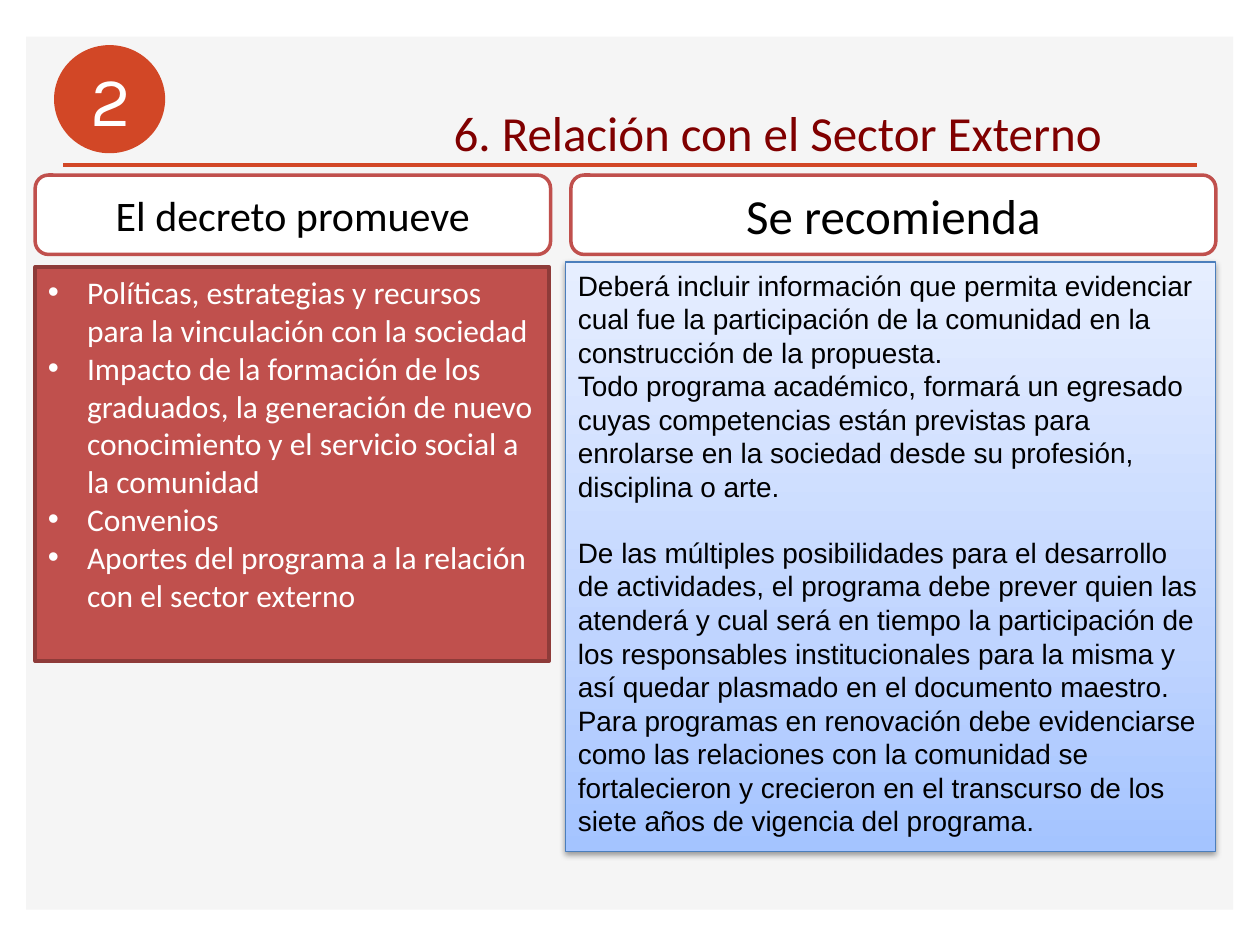
import pptx
import pptx.dml.color
import pptx.enum.shapes
import pptx.enum.text
import pptx.oxml
import pptx.oxml.ns
import pptx.util

Cm, Pt = pptx.util.Cm, pptx.util.Pt
SHAPE = pptx.enum.shapes.MSO_SHAPE
ALIGN = pptx.enum.text.PP_ALIGN
ANCHOR = pptx.enum.text.MSO_ANCHOR
qn = pptx.oxml.ns.qn

NUMBER = "2"
TITLE = "6. Relación con el Sector Externo"
PROMOTED = [
    "Políticas, estrategias y recursos para la vinculación con la sociedad",
    "Impacto de la formación de los graduados, la generación de nuevo "
    "conocimiento y el servicio social a la comunidad",
    "Convenios",
    "Aportes del programa a la relación con el sector externo",
]
RECOMMENDED = [
    "Deberá incluir información que permita evidenciar cual fue la participación "
    "de la comunidad en la construcción de la propuesta.",
    "Todo programa académico, formará un egresado cuyas competencias están "
    "previstas para enrolarse en la sociedad desde su profesión, disciplina o arte.",
    "De las múltiples posibilidades para el desarrollo de actividades, el programa "
    "debe prever quien las atenderá y cual será en tiempo la participación de los "
    "responsables institucionales para la misma y así quedar plasmado en el "
    "documento maestro.",
    "Para programas en renovación debe evidenciarse como las relaciones con la "
    "comunidad se fortalecieron y crecieron en el transcurso de los siete años "
    "de vigencia del programa.",
]
HEADINGS = [
    ("El decreto promueve", 0.71, 10.39, 24),
    ("Se recomienda", 11.51, 13.0, 28),
]
GRADIENT = [(0, "A4C4FF"), (35, "BFD4FF"), (100, "E6EEFF")]
ORANGE, RED, WHITE, BLACK = "D24726", "C0504D", "FFFFFF", "000000"


def color(value):
    return pptx.dml.color.RGBColor.from_string(value)


def xml(tag, attributes, inner=""):
    namespace = pptx.oxml.ns.nsdecls("a")
    return pptx.oxml.parse_xml(f"<a:{tag} {namespace} {attributes}>{inner}</a:{tag}>")


def place(shape, left, top, width, height):
    shape.left, shape.top, shape.width, shape.height = map(Cm, (left, top, width, height))


def paint(shape, fill=None, line=None, weight=2):
    shape.shadow.inherit = False
    if fill:
        shape.fill.solid()
        shape.fill.fore_color.rgb = color(fill)
    if line:
        shape.line.color.rgb = color(line)
        shape.line.width = Pt(weight)
    else:
        shape.line.fill.background()


def add_box(shapes, kind, left, top, width, height, **style):
    shape = shapes.add_shape(kind, *map(Cm, (left, top, width, height)))
    paint(shape, **style)
    return shape


def write(shape, texts, size, font="Calibri", ink=BLACK, align=ALIGN.LEFT, anchor=ANCHOR.TOP):
    frame = shape.text_frame
    frame.word_wrap = True
    frame.auto_size = pptx.enum.text.MSO_AUTO_SIZE.NONE
    frame.vertical_anchor = anchor
    for index, text in enumerate(texts):
        para = frame.add_paragraph() if index else frame.paragraphs[0]
        para.alignment = align
        para.space_before = Pt(0)
        span = para.add_run()
        span.text = text
        span.font.size = Pt(size)
        span.font.name = font
        span.font.color.rgb = color(ink)
    return frame.paragraphs


def add_bullets(paragraphs, indent):
    for para in paragraphs:
        properties = para._p.get_or_add_pPr()
        properties.set("marL", str(Cm(indent)))
        properties.set("indent", str(-Cm(indent)))
        properties.append(xml("buFont", 'typeface="Arial"'))
        properties.append(xml("buChar", 'char="•"'))


def add_gradient(shape):
    shape.fill.gradient()
    shape.fill.gradient_angle = 90
    stops = shape._element.spPr.find(".//" + qn("a:gsLst"))
    for stop in list(stops):
        stops.remove(stop)
    for position, value in GRADIENT:
        stops.append(xml("gs", f'pos="{position * 1000}"', f'<a:srgbClr val="{value}"/>'))


def add_shadow(shape):
    effects = shape._element.spPr.find(qn("a:effectLst"))
    effects.append(xml(
        "outerShdw",
        f'blurRad="{Pt(3.1)}" dist="{Pt(1.6)}" dir="5400000" rotWithShape="0"',
        '<a:srgbClr val="000000"><a:alpha val="38000"/></a:srgbClr>',
    ))


def main():
    deck = pptx.Presentation()
    deck.slide_width, deck.slide_height = Cm(25.4), Cm(19.05)
    page = deck.slides.add_slide(deck.slide_layouts[1])
    title, promoted = page.placeholders

    backdrop = add_box(page.shapes, SHAPE.RECTANGLE, 0.53, 0.74, 24.33, 17.6, fill="F5F5F5")
    page.shapes._spTree.insert(2, backdrop._element)

    rule = page.shapes.add_connector(
        pptx.enum.shapes.MSO_CONNECTOR.STRAIGHT, Cm(1.27), Cm(3.33), Cm(24.13), Cm(3.33))
    rule.line.color.rgb = color(ORANGE)
    rule.line.width = Pt(2)
    rule._element.spPr.append(xml("effectLst", ""))

    badge = page.shapes.add_group_shape()
    add_box(badge.shapes, SHAPE.OVAL, 1.09, 0.91, 2.24, 2.18, fill=ORANGE)
    number = badge.shapes.add_textbox(Cm(0.71), Cm(1.02), Cm(3.05), Cm(1.96))
    write(number, [NUMBER], 40, font="Karla", ink=WHITE, align=ALIGN.CENTER)

    place(title, 8.89, 1.93, 15.19, 1.45)
    write(title, [TITLE], 28, ink="800000")

    place(promoted, 0.71, 5.38, 10.36, 7.95)
    paint(promoted, fill=RED, line="8E3B39")
    add_bullets(write(promoted, PROMOTED, 18, ink=WHITE), 0.79)

    recommended = add_box(page.shapes, SHAPE.RECTANGLE, 11.4, 5.28, 13.11, 11.89,
                          line="4B7EBC", weight=0.75)
    add_gradient(recommended)
    add_shadow(recommended)
    paragraphs = write(recommended, RECOMMENDED, 16, font="Arial")
    paragraphs[2].space_before = Pt(18.4)

    for text, left, width, size in HEADINGS:
        heading = add_box(page.shapes, SHAPE.ROUNDED_RECTANGLE, left, 3.53, width, 1.6,
                          fill=WHITE, line=RED)
        write(heading, [text], size, align=ALIGN.CENTER, anchor=ANCHOR.MIDDLE)

    deck.save("out.pptx")


if __name__ == "__main__":
    main()
